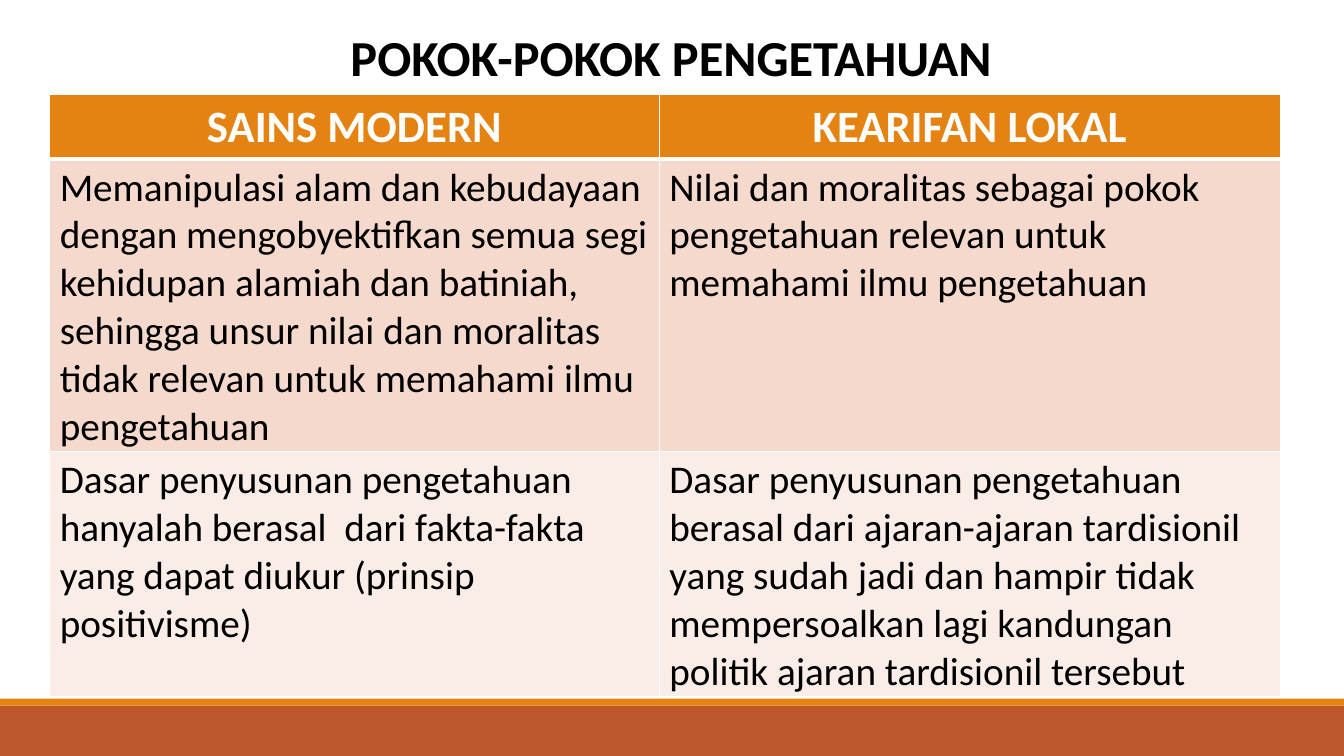
from lxml import etree
from pptx import Presentation
from pptx.dml.color import RGBColor
from pptx.enum.shapes import MSO_SHAPE
from pptx.enum.text import PP_ALIGN
from pptx.oxml.ns import qn
from pptx.util import Pt

RECT = MSO_SHAPE.RECTANGLE
LEFT, CENTER = PP_ALIGN.LEFT, PP_ALIGN.CENTER
COLORS = {"rust": "BD582C", "orange": "E48312", "peach": "F5D9CC",
          "blush": "FAEDE7", "white": "FFFFFF", "black": "000000"}


def add_text(tf, text, size=28, bold=False, color="black", align=LEFT):
    tf.word_wrap = True
    p = tf.paragraphs[0]
    p.alignment = align
    r = p.add_run()
    r.text = text
    r.font.name = "Calibri"
    r.font.size = Pt(size)
    r.font.bold = bold
    r.font.color.rgb = RGBColor.from_string(COLORS[color])


def add_border(cell, side, width):
    tcPr = cell._tc.get_or_add_tcPr()
    ln = etree.SubElement(tcPr, qn(f"a:{side}"), w=str(Pt(width)))
    fill = etree.SubElement(ln, qn("a:solidFill"))
    etree.SubElement(fill, qn("a:srgbClr"), val=COLORS["white"])


prs = Presentation()
prs.slide_width, prs.slide_height = Pt(960), Pt(540)
s = prs.slides.add_slide(prs.slide_layouts[6])

for top, height, color in [(504, 36, "rust"), (499, 5, "orange")]:
    sp = s.shapes.add_shape(RECT, 0, Pt(top), Pt(960), Pt(height))
    sp.shadow.inherit = False
    sp.fill.solid()
    sp.fill.fore_color.rgb = RGBColor.from_string(COLORS[color])
    sp.line.fill.background()

title = s.shapes.add_textbox(Pt(197), Pt(15), Pt(565), Pt(51))
add_text(title.text_frame, "POKOK-POKOK PENGETAHUAN", size=36, bold=True, align=CENTER)

header = {"size": 32, "bold": True, "color": "white", "align": CENTER}
rows = [
    (45, "orange", header, ["SAINS MODERN", "KEARIFAN LOKAL"]),
    (209, "peach", {}, [
        "Memanipulasi alam dan kebudayaan dengan mengobyektifkan semua segi kehidupan "
        "alamiah dan batiniah, sehingga unsur nilai dan moralitas tidak relevan untuk "
        "memahami ilmu pengetahuan",
        "Nilai dan moralitas sebagai pokok pengetahuan relevan untuk memahami ilmu pengetahuan"]),
    (175, "blush", {}, [
        "Dasar penyusunan pengetahuan  hanyalah berasal  dari fakta-fakta yang dapat "
        "diukur (prinsip positivisme)",
        "Dasar penyusunan pengetahuan berasal dari ajaran-ajaran tardisionil yang sudah "
        "jadi dan hampir tidak mempersoalkan lagi kandungan politik ajaran tardisionil tersebut"]),
]
table = s.shapes.add_table(3, 2, Pt(35.5), Pt(67.7), Pt(879), Pt(429)).table
for column, width in zip(table.columns, (435.5, 443.5)):
    column.width = Pt(width)

for i, (height, color, style, texts) in enumerate(rows):
    table.rows[i].height = Pt(height)
    for j, text in enumerate(texts):
        cell = table.cell(i, j)
        for side in ("lnL", "lnR", "lnT", "lnB"):
            thick = (i, side) in [(0, "lnB"), (1, "lnT")]
            add_border(cell, side, 3 if thick else 1)
        cell.fill.solid()
        cell.fill.fore_color.rgb = RGBColor.from_string(COLORS[color])
        add_text(cell.text_frame, text, **style)

prs.save("out.pptx")
